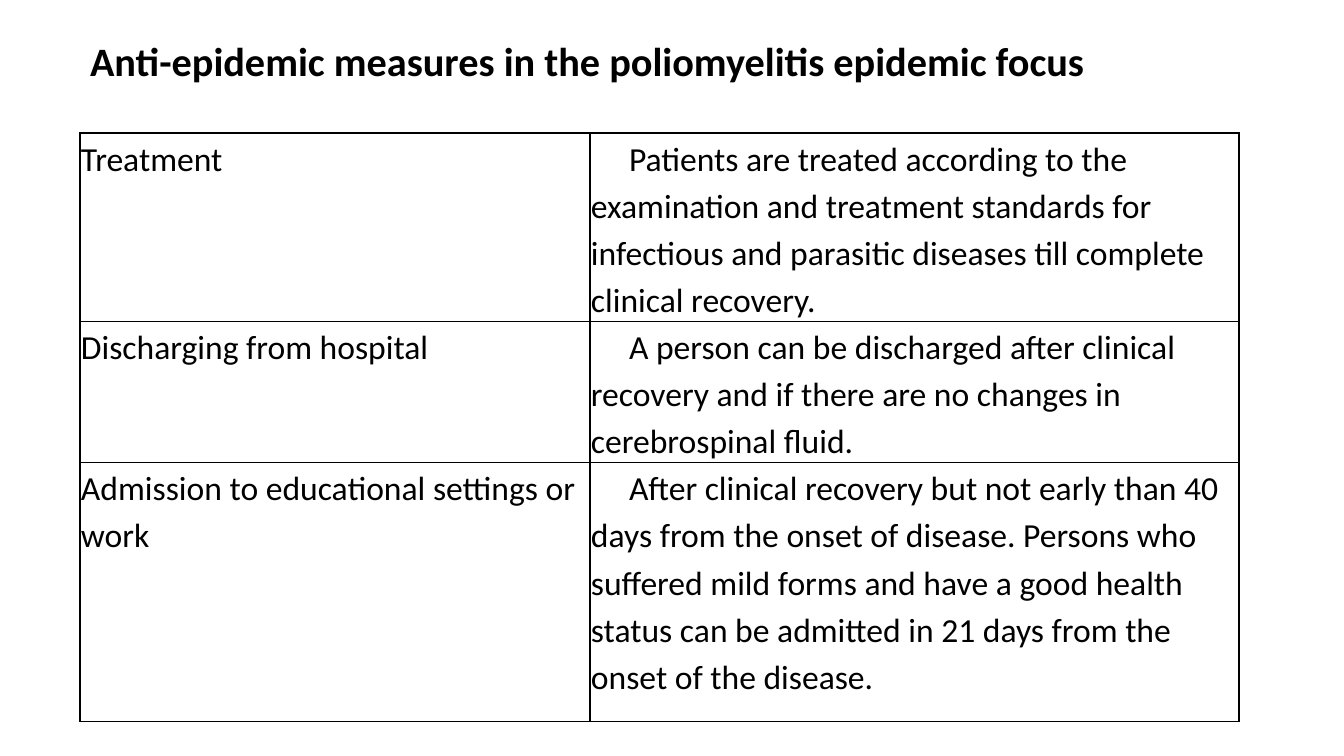
from lxml import etree
from pptx import Presentation
from pptx.dml.color import RGBColor
from pptx.enum.text import MSO_ANCHOR, MSO_AUTO_SIZE, PP_ALIGN
from pptx.oxml.ns import qn
from pptx.util import Pt

TOP = MSO_ANCHOR.TOP
LEFT = PP_ALIGN.LEFT
FIXED = MSO_AUTO_SIZE.NONE
THEME = {"font": "Calibri", "ink": "000000", "title": 28.8, "body": 24, "line": 1}


def px(n):
    return round(n * 914400 / 100.8)


def style(par, size, gap, bold=False):
    par.alignment = LEFT
    par.line_spacing = gap
    par.font.name = THEME["font"]
    par.font.size = Pt(size)
    par.font.bold = bold
    par.font.color.rgb = RGBColor.from_string(THEME["ink"])


deck = Presentation()
deck.slide_width, deck.slide_height = px(1344), px(756)
slide = deck.slides.add_slide(deck.slide_layouts[5])

title = slide.shapes.title
title.left, title.top, title.width, title.height = px(80), px(37), px(1159), px(96)
frame = title.text_frame
frame.text = "Anti-epidemic measures in the poliomyelitis epidemic focus"
frame.auto_size = FIXED
frame.word_wrap = True
frame.vertical_anchor = TOP
frame.margin_left = frame.margin_right = px(10)
frame.margin_top = frame.margin_bottom = px(5)
style(frame.paragraphs[0], THEME["title"], 0.9, True)

rows = [
    (188, "Treatment",
     "Patients are treated according to the examination and treatment standards "
     "for infectious and parasitic diseases till complete clinical recovery."),
    (141, "Discharging from hospital",
     "A person can be discharged after clinical recovery and if there are no "
     "changes in cerebrospinal fluid."),
    (259, "Admission to educational settings or work",
     "After clinical recovery but not early than 40 days from the onset of disease. "
     "Persons who suffered mild forms and have a good health status can be admitted "
     "in 21 days from the\nonset of the disease."),
]
widths = [510, 649]
high = sum(row[0] for row in rows)
grid = slide.shapes.add_table(
    len(rows), len(widths), px(80), px(133), px(sum(widths)), px(high)).table
grid.first_row = grid.horz_banding = False
for col, width in zip(grid.columns, widths):
    col.width = px(width)

for r, (height, *texts) in enumerate(rows):
    grid.rows[r].height = px(height)
    for c, text in enumerate(texts):
        cell = grid.cell(r, c)
        cell.text = text
        cell.margin_left = cell.margin_right = px(1)
        cell.margin_top = cell.margin_bottom = 0
        cell.vertical_anchor = TOP
        for par in cell.text_frame.paragraphs:
            style(par, THEME["body"], 1.15)
        if c == 1:
            lead = cell.text_frame.paragraphs[0]
            lead._p.get_or_add_pPr().set("indent", str(px(38)))
        props = cell._tc.get_or_add_tcPr()
        for side in ("a:lnL", "a:lnR", "a:lnT", "a:lnB"):
            edge = etree.SubElement(props, qn(side), w=str(Pt(THEME["line"])))
            fill = etree.SubElement(edge, qn("a:solidFill"))
            etree.SubElement(fill, qn("a:srgbClr"), val=THEME["ink"])
        cell.fill.background()

deck.save("out.pptx")
